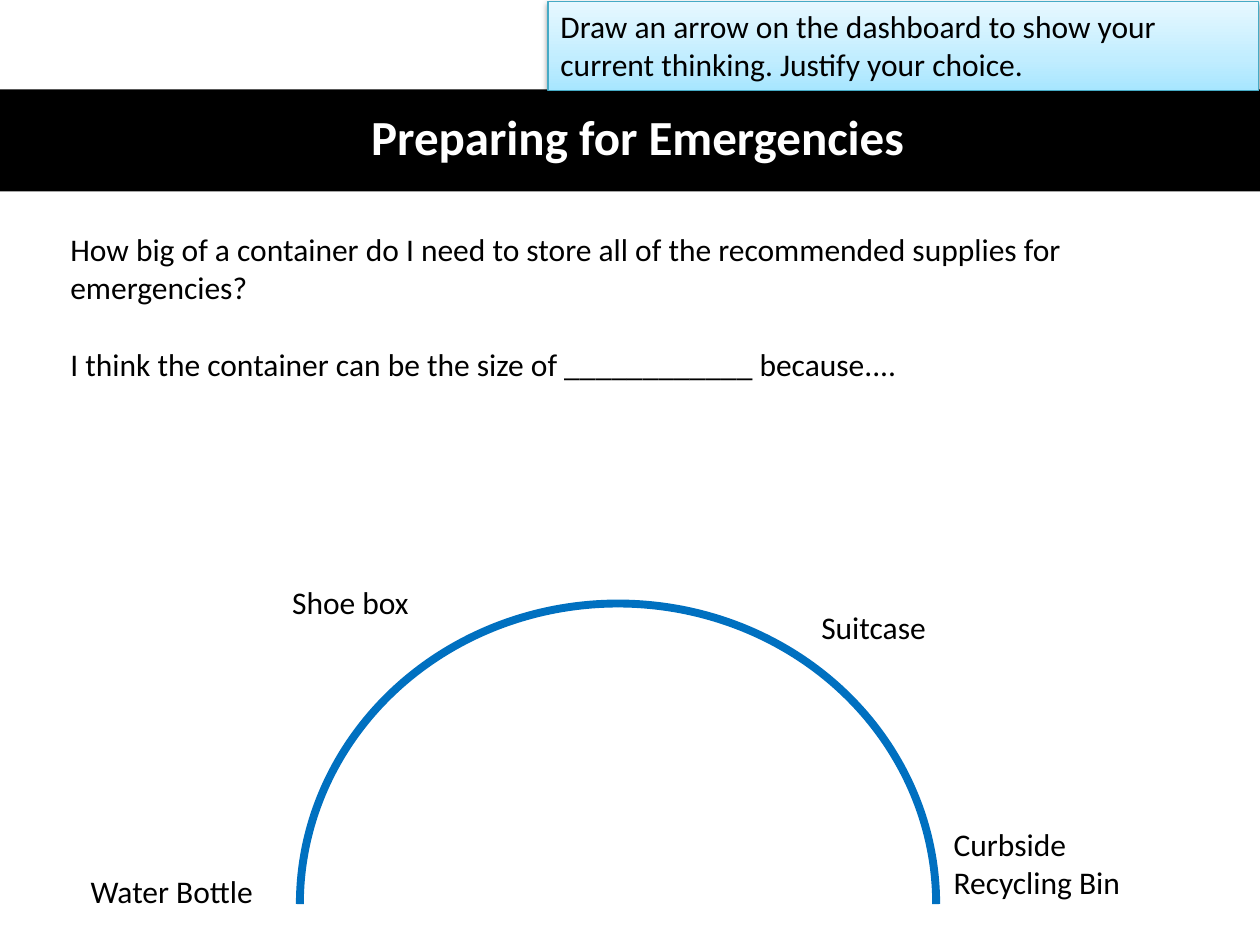
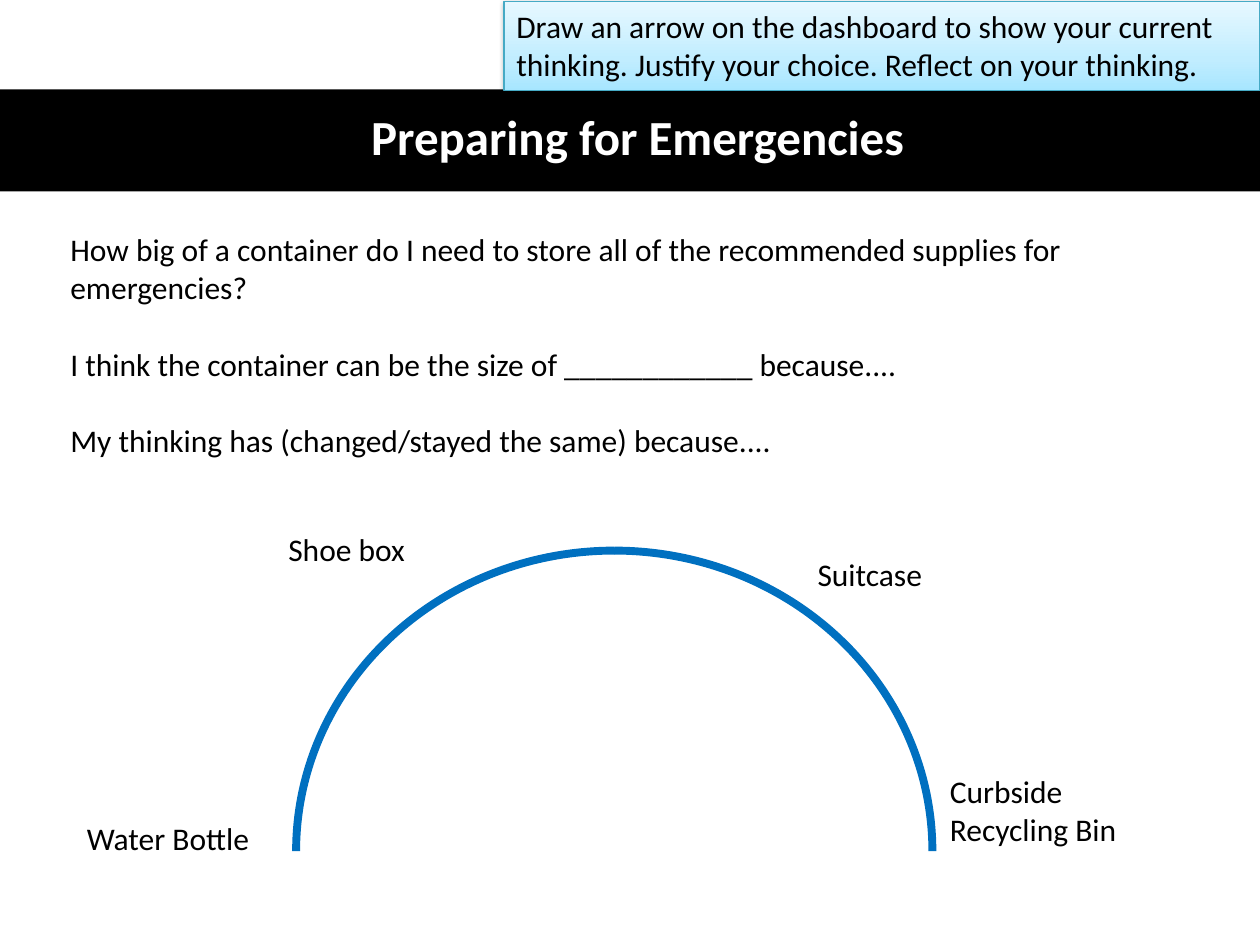
from copy import deepcopy

from lxml import etree
from pptx import Presentation
from pptx.dml.color import RGBColor
from pptx.enum.shapes import MSO_SHAPE
from pptx.enum.text import MSO_ANCHOR, MSO_AUTO_SIZE, PP_ALIGN
from pptx.oxml import parse_xml
from pptx.util import Inches, Pt

RECTANGLE, ARC = MSO_SHAPE.RECTANGLE, MSO_SHAPE.ARC
LEFT, CENTER = PP_ALIGN.LEFT, PP_ALIGN.CENTER
TOP, MIDDLE = MSO_ANCHOR.TOP, MSO_ANCHOR.MIDDLE
GROW, FIXED = MSO_AUTO_SIZE.SHAPE_TO_FIT_TEXT, MSO_AUTO_SIZE.NONE

FONT = "Calibri"
BLACK, WHITE, DIAL_BLUE, PROMPT_EDGE = "000000", "FFFFFF", "0070C0", "46AAC5"
PROMPT_STOPS = [(0, "A7E6FF"), (0.35, "C1EDFF"), (1, "E7F8FF")]
DRAWING_NS = "http://schemas.openxmlformats.org/drawingml/2006/main"
PROMPT_SHADOW = (
    f'<a:outerShdw xmlns:a="{DRAWING_NS}" blurRad="{Pt(3.1)}" dist="{Pt(1.6)}" '
    'dir="5400000" rotWithShape="0"><a:srgbClr val="000000">'
    '<a:alpha val="38000"/></a:srgbClr></a:outerShdw>'
)

TITLE = "Preparing for Emergencies"
QUESTION = ("How big of a container do I need to store all of the "
            "recommended supplies for emergencies?")
CLAIM = "I think the container can be the size of ____________ because...."
REFLECTION = "My thinking has (changed/stayed the same) because...."
PROMPT = "Draw an arrow on the dashboard to show your current thinking. Justify your choice."

DIAL_SIZE = (5.05, 4.77)
DIAL_LABELS = [
    ("Water Bottle", (-1.76, 2.08, 1.72, 0.4)),
    ("Shoe box", (-0.16, -0.21, 1.17, 0.42)),
    ("Suitcase", (4.04, -0.01, 1.2, 0.4)),
    ("Curbside Recycling Bin", (5.09, 1.71, 1.69, 0.71)),
]


def color(value):
    """Turn a hex string into a colour."""
    return RGBColor.from_string(value)


def inches(box):
    """Turn a box of numbers into lengths."""
    return [Inches(number) for number in box]


def write(shape, *texts, size=18, ink=BLACK, bold=False, align=LEFT,
          anchor=TOP, fit=GROW, gap=0, spacing=None):
    """Fill a shape with one paragraph per text."""
    frame = shape.text_frame
    frame.word_wrap = True
    frame.auto_size = fit
    frame.vertical_anchor = anchor
    for index, text in enumerate(texts):
        para = frame.add_paragraph() if index else frame.paragraphs[0]
        para.alignment = align
        para.line_spacing = spacing
        if index:
            para.space_before = Pt(gap)
        span = para.add_run()
        span.text = text
        span.font.name = FONT
        span.font.size = Pt(size)
        span.font.bold = bold
        span.font.color.rgb = color(ink)


def add_text(shapes, box, *texts, **style):
    """Add a text box."""
    write(shapes.add_textbox(*inches(box)), *texts, **style)


def add_title(page):
    """Place the title over a black band across the page."""
    band = page.shapes.add_shape(RECTANGLE, *inches((0, 0.71, 10, 0.81)))
    band.shadow.inherit = False
    band.fill.solid()
    band.fill.fore_color.rgb = color(BLACK)
    band.line.fill.background()
    title = page.shapes.title
    title.element.addprevious(band.element)
    title.left, title.top, title.width, title.height = inches((0.46, 0.7, 9.2, 0.81))
    write(title, TITLE, size=28, ink=WHITE, bold=True, align=CENTER,
          anchor=MIDDLE, fit=FIXED, spacing=0.9)


def add_dashboard(page, left, top):
    """Draw the half-circle dial and its labels from the dial's corner."""
    dial = page.shapes.add_group_shape()
    for flipped in (False, True):
        arc = dial.shapes.add_shape(ARC, *inches((left, top, *DIAL_SIZE)))
        arc.shadow.inherit = False
        arc.fill.background()
        arc.line.color.rgb = color(DIAL_BLUE)
        arc.line.width = Pt(4.5)
        if flipped:
            arc.element.spPr.xfrm.set("flipH", "1")
    for label, (across, down, width, height) in DIAL_LABELS:
        add_text(dial.shapes, (left + across, top + down, width, height), label)


def add_prompt(page, left, width, text):
    """Add the shaded instruction box at the top of the page."""
    prompt = page.shapes.add_shape(RECTANGLE, *inches((left, 0.01, width, 0.71)))
    prompt.fill.gradient()
    prompt.fill.gradient_angle = 90
    stop_list = prompt.element.xpath("./p:spPr/a:gradFill/a:gsLst")[0]
    stop_list.append(deepcopy(stop_list[-1]))
    for stop, (position, shade) in zip(prompt.fill.gradient_stops, PROMPT_STOPS):
        stop.position = position
        stop.color.rgb = color(shade)
    prompt.line.color.rgb = color(PROMPT_EDGE)
    prompt.line.width = Pt(0.75)
    prompt.shadow.inherit = False
    effects = prompt.element.spPr.find(etree.QName(DRAWING_NS, "effectLst").text)
    effects.append(parse_xml(PROMPT_SHADOW))
    write(prompt, text)


def add_page(deck, thoughts, body_height, dial_corner, prompt_box, prompt_text):
    """Build one thinking page."""
    page = deck.slides.add_slide(deck.slide_layouts[5])
    add_title(page)
    add_text(page.shapes, (0.46, 1.78, 9.19, body_height), *thoughts, gap=22)
    add_dashboard(page, *dial_corner)
    add_prompt(page, *prompt_box, prompt_text)


def main():
    """Build and save the deck."""
    deck = Presentation()
    deck.slide_width, deck.slide_height = inches((10, 7.5))
    add_page(deck, [QUESTION, CLAIM], 1.31, (2.38, 4.79), (4.35, 5.64), PROMPT)
    add_page(deck, [QUESTION, CLAIM, REFLECTION], 1.92, (2.35, 4.37), (4, 6),
             PROMPT + " Reflect on your thinking.")
    deck.save("out.pptx")


if __name__ == "__main__":
    main()
